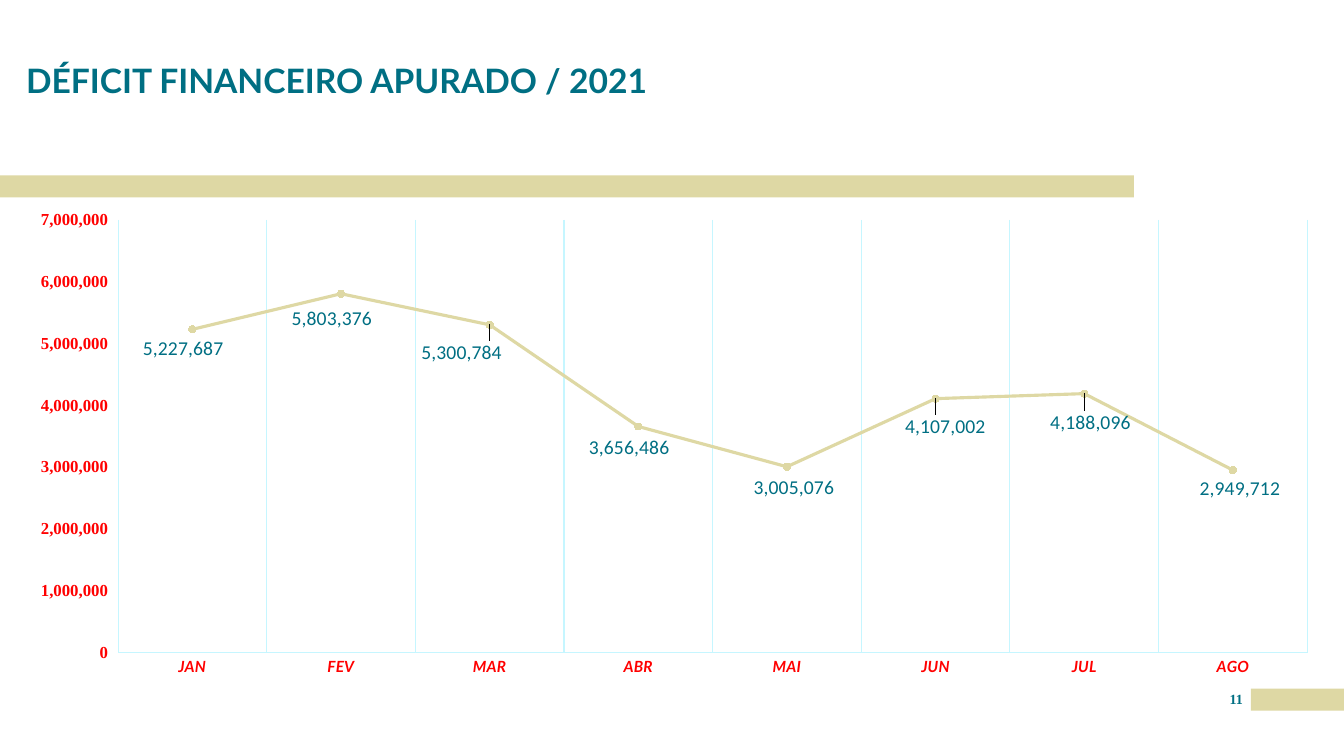
from lxml.etree import SubElement
from pptx import Presentation
from pptx.chart.data import CategoryChartData
from pptx.dml.color import RGBColor
from pptx.enum.chart import XL_CHART_TYPE, XL_LABEL_POSITION, XL_MARKER_STYLE, XL_TICK_MARK
from pptx.enum.shapes import MSO_SHAPE
from pptx.enum.text import MSO_ANCHOR, PP_ALIGN
from pptx.oxml import parse_xml
from pptx.oxml.ns import nsdecls, qn
from pptx.util import Pt

COLORS = {"sand": "DED8A4", "teal": "006F83", "red": "FF0000", "grid": "C6F6FF", "white": "FFFFFF"}
CHART_WIDTH, CHART_HEIGHT = 942, 345.6
NUMBER_FORMAT = "#,##0"
DEFICITS = {
    "JAN": (5227687, -6.5, 13.5),
    "FEV": (5803376, -6.5, 18),
    "MAR": (5300784, -20, 20),
    "ABR": (3656486, -6.5, 15),
    "MAI": (3005076, 5, 15),
    "JUN": (4107002, 7, 20),
    "JUL": (4188096, 4.5, 20.5),
    "AGO": (2949712, 5, 13.5),
}


def color(name):
    return RGBColor.from_string(COLORS[name])


def style_font(font, name, size, tint, bold=False, italic=False):
    font.name = name
    font.size = Pt(size)
    font.color.rgb = color(tint)
    font.bold = bold
    font.italic = italic


def style_line(line, tint, width):
    line.color.rgb = color(tint)
    line.width = Pt(width)


def add_bar(page, left, top, width, height):
    bar = page.shapes.add_shape(MSO_SHAPE.RECTANGLE, Pt(left), Pt(top), Pt(width), Pt(height))
    bar.shadow.inherit = False
    bar.fill.solid()
    bar.fill.fore_color.rgb = color("sand")
    bar.line.fill.background()


def add_text(page, text, left, top, width, height, font, size,
             align=PP_ALIGN.LEFT, anchor=MSO_ANCHOR.TOP, side=0, spacing=1.0):
    box = page.shapes.add_textbox(Pt(left), Pt(top), Pt(width), Pt(height))
    frame = box.text_frame
    frame.word_wrap = True
    frame.vertical_anchor = anchor
    frame.margin_left = frame.margin_right = Pt(side)
    frame.margin_top = frame.margin_bottom = Pt(side / 2)
    para = frame.paragraphs[0]
    para.alignment = align
    para.line_spacing = spacing
    span = para.add_run()
    span.text = text
    style_font(span.font, font, size, "teal", bold=True)
    return box


def manual_layout(x, y, width=None, height=None):
    layout = parse_xml(f"<c:layout {nsdecls('c')}><c:manualLayout/></c:layout>")
    values = {"x": x / CHART_WIDTH, "y": y / CHART_HEIGHT}
    if width:
        values = {"layoutTarget": "inner", "xMode": "edge", "yMode": "edge", **values,
                  "w": width / CHART_WIDTH, "h": height / CHART_HEIGHT}
    for tag, value in values.items():
        SubElement(layout[0], qn(f"c:{tag}")).set("val", str(value))
    return layout


def place_plot(chart, left, top, width, height):
    plot_area = chart.element.find(f".//{qn('c:plotArea')}")
    for layout in plot_area.findall(qn("c:layout")):
        plot_area.remove(layout)
    plot_area.insert(0, manual_layout(left, top, width, height))


def style_axes(chart):
    months = chart.category_axis
    months.major_tick_mark = XL_TICK_MARK.NONE
    months.has_major_gridlines = True
    style_line(months.major_gridlines.format.line, "grid", 0.75)
    style_line(months.format.line, "grid", 0.75)
    style_font(months.tick_labels.font, "Lato", 11, "red", bold=True, italic=True)
    amounts = chart.value_axis
    amounts.has_major_gridlines = False
    amounts.minimum_scale = 0
    amounts.maximum_scale = 7000000
    amounts.major_unit = 1000000
    amounts.major_tick_mark = XL_TICK_MARK.OUTSIDE
    amounts.format.line.fill.background()
    amounts.tick_labels.number_format = NUMBER_FORMAT
    amounts.tick_labels.number_format_is_linked = False
    style_font(amounts.tick_labels.font, "Times New Roman", 12, "red", bold=True)


def style_series(series):
    series.smooth = False
    style_line(series.format.line, "sand", 2.25)
    series.marker.style = XL_MARKER_STYLE.CIRCLE
    series.marker.size = 5
    series.marker.format.fill.solid()
    series.marker.format.fill.fore_color.rgb = color("sand")
    style_line(series.marker.format.line, "sand", 0.75)


def label_points(series):
    labels = series.data_labels
    labels.show_value = True
    labels.number_format = NUMBER_FORMAT
    labels.number_format_is_linked = False
    labels.position = XL_LABEL_POSITION.CENTER
    style_font(labels.font, "Calibri", 14, "teal")
    for index in range(len(DEFICITS)):
        label = series.points[index].data_label
        style_font(label.font, "Calibri", 14, "teal")
        label.position = XL_LABEL_POSITION.CENTER
    point_labels = labels._element.findall(qn("c:dLbl"))
    for point_label, (_, shift_x, shift_y) in zip(point_labels, DEFICITS.values()):
        point_label.insert(1, manual_layout(shift_x, shift_y))


def add_deficit_chart(page, left, top):
    data = CategoryChartData(number_format=NUMBER_FORMAT)
    data.categories = list(DEFICITS)
    data.add_series("Déficit", [value for value, _, _ in DEFICITS.values()])
    chart = page.shapes.add_chart(XL_CHART_TYPE.LINE_MARKERS_STACKED, Pt(left), Pt(top),
                                  Pt(CHART_WIDTH), Pt(CHART_HEIGHT), data).chart
    chart.has_legend = False
    chart.has_title = False
    style_font(chart.font, "Times New Roman", 10, "teal")
    chart.plots[0].vary_by_categories = False
    place_plot(chart, 73.5, 13, 849.5, 309.2)
    style_axes(chart)
    style_series(chart.plots[0].series[0])
    label_points(chart.plots[0].series[0])


def main():
    deck = Presentation()
    deck.slide_width, deck.slide_height = Pt(960), Pt(540)
    page = deck.slides.add_slide(deck.slide_layouts[6])
    add_bar(page, 893.5, 491.8, 66.5, 15.8)
    add_bar(page, 0, 125.3, 810, 15.8)
    add_text(page, "11", 872.6, 493.2, 20.9, 18, "Times New Roman", 10, align=PP_ALIGN.CENTER)
    title = add_text(page, "DÉFICIT FINANCEIRO APURADO / 2021", 11.5, 28.8, 935.3, 59.8,
                     "Lato", 24, anchor=MSO_ANCHOR.MIDDLE, side=7.2, spacing=0.9)
    style_line(title.line, "white", 0.75)
    add_deficit_chart(page, 10.8, 144)
    deck.save("out.pptx")


if __name__ == "__main__":
    main()
